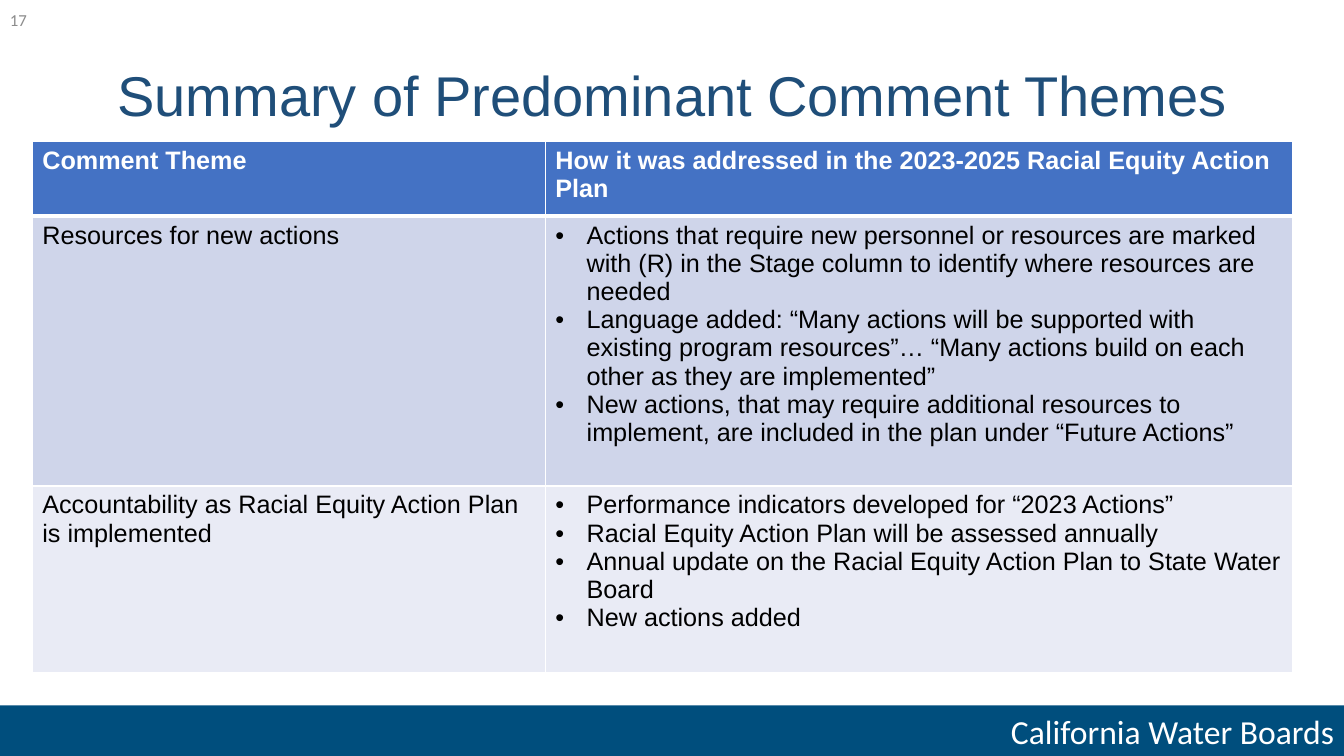
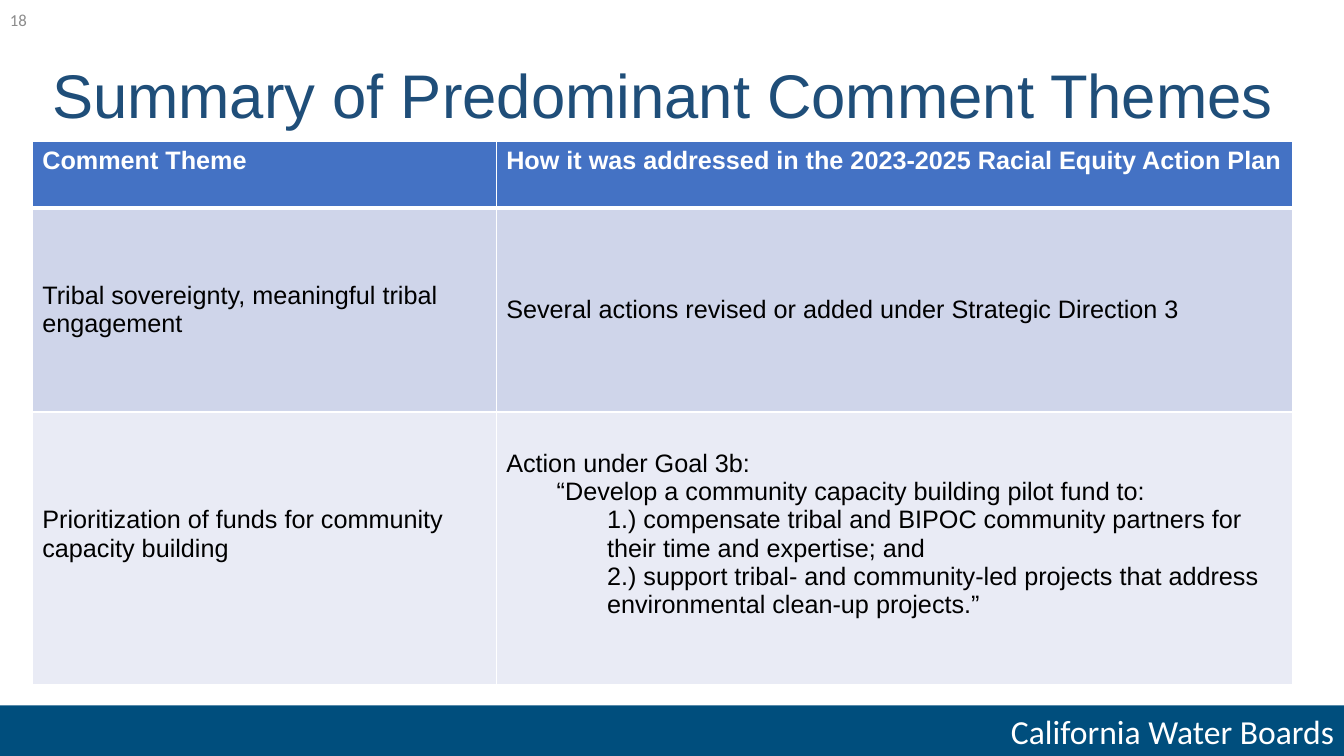
from dataclasses import dataclass

from lxml.etree import SubElement
from pptx import Presentation
from pptx.dml.color import RGBColor
from pptx.enum.shapes import MSO_SHAPE
from pptx.enum.text import MSO_ANCHOR, MSO_AUTO_SIZE, PP_ALIGN
from pptx.oxml.ns import qn
from pptx.util import Inches, Pt


@dataclass(frozen=True)
class Theme:
    width: float = 13.33
    height: float = 7.5
    font: str = "Arial"
    label_font: str = "Calibri"
    title: str = "1F4E79"
    band: str = "004E7D"
    number: str = "8C8C8C"
    header: str = "4472C4"
    rows: tuple = ("CFD5EA", "E9EBF5")
    white: str = "FFFFFF"
    black: str = "000000"
    cell_size: int = 18
    band_size: int = 24
    number_size: int = 12
    rule: int = 1
    header_rule: int = 3
    bullet_indent: float = 0.31
    step_indent: float = 0.5


@dataclass(frozen=True)
class Line:
    text: str
    level: int = 0
    bullet: bool = False


THEME = Theme()
TITLE = "Summary of Predominant Comment Themes"
HEADER = ("Comment Theme", "How it was addressed in the 2023-2025 Racial Equity Action Plan")


def across(percent):
    return Inches(THEME.width * percent / 100)


def down(percent):
    return Inches(THEME.height * percent / 100)


def area(left, top, width, height):
    return across(left), down(top), across(width), down(height)


def style(p, font, size, color, bold=False):
    for r in p.runs:
        r.font.name = font
        r.font.size = Pt(size)
        r.font.bold = bold
        r.font.color.rgb = RGBColor.from_string(color)


def add_title(s, left, width, size):
    sp = s.shapes.title
    sp.left, sp.top, sp.width, sp.height = area(left, 3.4, width, 19.3)
    tf = sp.text_frame
    tf.text = TITLE
    tf.word_wrap = True
    tf.auto_size = MSO_AUTO_SIZE.NONE
    tf.vertical_anchor = MSO_ANCHOR.MIDDLE
    p = tf.paragraphs[0]
    p.alignment = PP_ALIGN.CENTER
    p.line_spacing = 0.9
    style(p, THEME.font, size, THEME.title)


def add_label(sp, text, size, color, align):
    tf = sp.text_frame
    tf.text = text
    tf.word_wrap = True
    tf.vertical_anchor = MSO_ANCHOR.MIDDLE
    p = tf.paragraphs[0]
    p.alignment = align
    style(p, THEME.label_font, size, color)


def add_frame(s, number):
    band = s.shapes.add_shape(MSO_SHAPE.RECTANGLE, *area(0, 93.3, 100, 6.7))
    band.shadow.inherit = False
    band.fill.solid()
    band.fill.fore_color.rgb = RGBColor.from_string(THEME.band)
    band.line.fill.background()
    add_label(band, "California Water Boards", THEME.band_size, THEME.white, PP_ALIGN.RIGHT)
    box = s.shapes.add_textbox(*area(0, 0, 22.5, 5.33))
    add_label(box, str(number), THEME.number_size, THEME.number, PP_ALIGN.LEFT)


def set_borders(cell, top, bottom):
    tcPr = cell._tc.get_or_add_tcPr()
    widths = {"a:lnL": THEME.rule, "a:lnR": THEME.rule, "a:lnT": top, "a:lnB": bottom}
    for tag, width in widths.items():
        ln = SubElement(tcPr, qn(tag), w=str(Pt(width)))
        fill = SubElement(ln, qn("a:solidFill"))
        SubElement(fill, qn("a:srgbClr"), val=THEME.white)


def set_indent(p, line):
    pPr = p._p.get_or_add_pPr()
    if line.bullet:
        pPr.set("marL", str(Inches(THEME.bullet_indent)))
        pPr.set("indent", str(-Inches(THEME.bullet_indent)))
        SubElement(pPr, qn("a:buFont"), typeface=THEME.font)
        SubElement(pPr, qn("a:buChar"), char="•")
    elif line.level:
        pPr.set("marL", str(Inches(THEME.step_indent * line.level)))
        pPr.set("indent", "0")


def fill_cell(cell, lines, row, anchor):
    is_header = row == 0
    set_borders(cell,
                THEME.header_rule if row == 1 else THEME.rule,
                THEME.header_rule if is_header else THEME.rule)
    cell.fill.solid()
    fill = THEME.header if is_header else THEME.rows[(row - 1) % 2]
    cell.fill.fore_color.rgb = RGBColor.from_string(fill)
    cell.vertical_anchor = MSO_ANCHOR.TOP if is_header else anchor
    tf = cell.text_frame
    tf.text = "\n".join(line.text for line in lines)
    for p, line in zip(tf.paragraphs, lines):
        set_indent(p, line)
        color = THEME.white if is_header else THEME.black
        style(p, THEME.font, THEME.cell_size, color, bold=is_header)


def add_theme_table(s, body, split, heights, anchor):
    rows = [[[Line(text)] for text in HEADER]] + body
    left, top, width, height = area(2.4, 18.7, 93.8, sum(heights))
    table = s.shapes.add_table(len(rows), 2, left, top, width, height).table
    for column, share in zip(table.columns, (split, 100 - split)):
        column.width = int(width * share / 100)
    for i, (cells, row_height) in enumerate(zip(rows, heights)):
        table.rows[i].height = down(row_height)
        for j, lines in enumerate(cells):
            fill_cell(table.cell(i, j), lines, i, anchor)
    return table


def bullets(*texts):
    return [Line(text, bullet=True) for text in texts]


def add_slide(prs, number, left, width, size):
    s = prs.slides.add_slide(prs.slide_layouts[5])
    add_frame(s, number)
    add_title(s, left, width, size)
    return s


def add_resources_slide(prs):
    s = add_slide(prs, 17, 6.9, 86.2, 40)
    body = [
        [[Line("Resources for new actions")], bullets(
            "Actions that require new personnel or resources are marked with (R) in the Stage "
            "column to identify where resources are needed",
            "Language added: “Many actions will be supported with existing program resources”… "
            "“Many actions build on each other as they are implemented”",
            "New actions, that may require additional resources to implement, are included in "
            "the plan under “Future Actions”")],
        [[Line("Accountability as Racial Equity Action Plan is implemented")], bullets(
            "Performance indicators developed for “2023 Actions”",
            "Racial Equity Action Plan will be assessed annually",
            "Annual update on the Racial Equity Action Plan to State Water Board",
            "New actions added")],
    ]
    add_theme_table(s, body, 40.7, (9.9, 35.7, 24.7), MSO_ANCHOR.TOP)


def add_engagement_slide(prs):
    s = add_slide(prs, 18, 1.2, 96.3, 44)
    body = [
        [[Line("Tribal sovereignty, meaningful tribal engagement")],
         [Line("Several actions revised or added under Strategic Direction 3")]],
        [[Line("Prioritization of funds for community capacity building")],
         [Line("Action under Goal 3b:"),
          Line("“Develop a community capacity building pilot fund to:", 1),
          Line("1.) compensate tribal and BIPOC community partners for their time and "
               "expertise; and", 2),
          Line("2.) support tribal- and community-led projects that address environmental "
               "clean-up projects.”", 2)]],
    ]
    table = add_theme_table(s, body, 36.8, (8.8, 27, 36.1), MSO_ANCHOR.MIDDLE)
    for cell in table.rows[2].cells:
        cell.margin_bottom = Inches(0.33)


def main():
    prs = Presentation()
    prs.slide_width = Inches(THEME.width)
    prs.slide_height = Inches(THEME.height)
    add_resources_slide(prs)
    add_engagement_slide(prs)
    prs.save("out.pptx")


if __name__ == "__main__":
    main()
